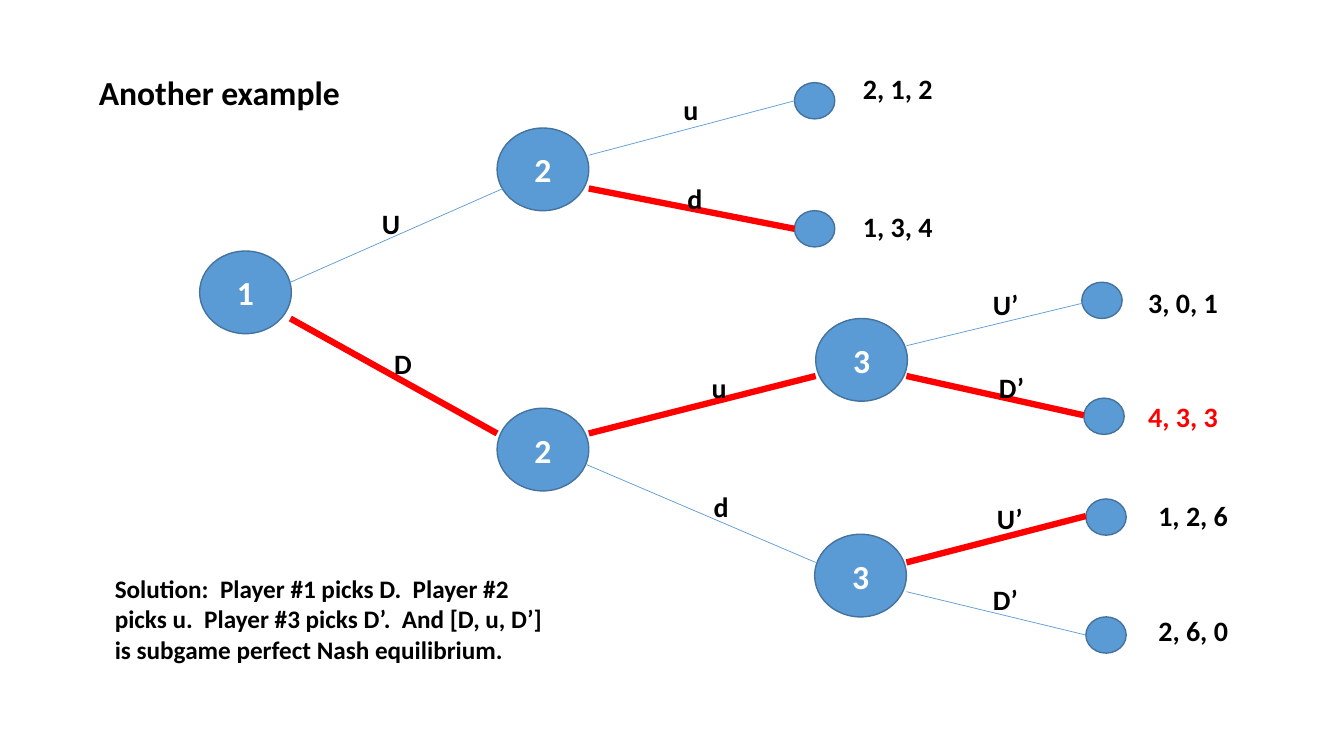
"""Build a slide showing a three-player game tree with its subgame perfect equilibrium."""
from lxml import etree
from pptx import Presentation
from pptx.dml.color import RGBColor
from pptx.enum.shapes import MSO_CONNECTOR, MSO_SHAPE
from pptx.enum.text import MSO_ANCHOR, MSO_AUTO_SIZE, PP_ALIGN
from pptx.oxml.ns import qn
from pptx.util import Inches, Pt

STRAIGHT = MSO_CONNECTOR.STRAIGHT
OVAL = MSO_SHAPE.OVAL
TOP, MIDDLE = MSO_ANCHOR.TOP, MSO_ANCHOR.MIDDLE
LEFT, CENTER = PP_ALIGN.LEFT, PP_ALIGN.CENTER
GROW = MSO_AUTO_SIZE.SHAPE_TO_FIT_TEXT

THEME = {
    "font": "Calibri",
    "node": RGBColor(0x5B, 0x9B, 0xD5),
    "outline": RGBColor(0x43, 0x73, 0x9E),
    "chosen": RGBColor(0xFF, 0x00, 0x00),
    "ink": RGBColor(0x00, 0x00, 0x00),
    "light": RGBColor(0xFF, 0xFF, 0xFF),
    "title_size": Pt(24),
    "label_size": Pt(20),
    "note_size": Pt(18),
    "outline_width": Pt(1),
    "branch_width": Pt(0.5),
    "chosen_width": Pt(4.5),
}


def write(box, text, size, color="ink", align=LEFT, anchor=TOP):
    """Fill a shape with one bold paragraph."""
    frame = box.text_frame
    frame.word_wrap = True
    frame.vertical_anchor = anchor
    para = frame.paragraphs[0]
    para.alignment = align
    span = para.add_run()
    span.text = text
    span.font.color.rgb = THEME[color]
    formats = {"name": THEME["font"], "size": THEME[size], "bold": True}
    for name, value in formats.items():
        setattr(span.font, name, value)


def add_node(page, left, top, width, height):
    """Add one ellipse of the tree."""
    node = page.shapes.add_shape(
        OVAL, Inches(left), Inches(top), Inches(width), Inches(height))
    node.shadow.inherit = False
    node.fill.solid()
    node.fill.fore_color.rgb = THEME["node"]
    node.line.color.rgb = THEME["outline"]
    node.line.width = THEME["outline_width"]
    return node


deck = Presentation()
deck.slide_width = Inches(13.33)
deck.slide_height = Inches(7.5)
page = deck.slides.add_slide(deck.slide_layouts[5])

players = [("1", 1.98, 2.49), ("2", 4.93, 1.27), ("2", 4.93, 4.05),
           ("3", 8.09, 3.16), ("3", 8.08, 5.3)]
for player, left, top in players:
    node = add_node(page, left, top, 0.91, 0.82)
    write(node, player, "title_size", "light", CENTER, MIDDLE)

outcomes = [(7.88, 0.82), (7.88, 2.09), (10.73, 2.8),
            (10.75, 3.95), (10.77, 4.95), (10.77, 6.12)]
for left, top in outcomes:
    add_node(page, left, top, 0.4, 0.36)

branches = [
    (2.88, 2.8, 4.99, 1.87, False),
    (2.88, 3.16, 4.93, 4.3, True),
    (5.84, 1.54, 7.88, 1, False),
    (5.84, 1.87, 7.88, 2.27, True),
    (5.84, 4.3, 8.09, 3.73, True),
    (5.82, 4.61, 8.09, 5.58, False),
    (8.99, 3.43, 10.77, 3, False),
    (8.99, 3.73, 10.75, 4.12, True),
    (8.99, 5.58, 10.77, 5.12, True),
    (8.99, 5.87, 10.77, 6.3, False),
]
for *ends, chosen in branches:
    branch = page.shapes.add_connector(STRAIGHT, *map(Inches, ends))
    branch.line.color.rgb = THEME["chosen" if chosen else "node"]
    branch.line.width = THEME["chosen_width" if chosen else "branch_width"]
    etree.SubElement(branch._element.spPr, qn("a:effectLst"))

labels = [
    ("2, 1, 2", 8.46, 0.66, 0.99, "ink"),
    ("1, 3, 4", 8.46, 2.03, 0.99, "ink"),
    ("3, 0, 1", 11.29, 2.78, 1.04, "ink"),
    ("4, 3, 3", 11.29, 3.91, 1.04, "chosen"),
    ("1, 2, 6", 11.39, 4.9, 0.94, "ink"),
    ("2, 6, 0", 11.39, 6.04, 0.99, "ink"),
    ("U", 3.69, 2, 0.36, "ink"),
    ("D", 3.81, 3.39, 0.34, "ink"),
    ("u", 6.68, 0.87, 0.28, "ink"),
    ("d", 6.72, 1.75, 0.37, "ink"),
    ("u", 6.96, 3.63, 0.24, "ink"),
    ("d", 6.98, 4.81, 0.22, "ink"),
    ("U’", 9.75, 2.8, 0.47, "ink"),
    ("D’", 9.81, 3.63, 0.5, "ink"),
    ("U’", 9.79, 4.93, 0.56, "ink"),
    ("D’", 9.75, 5.73, 0.56, "ink"),
]
for text, left, top, width, color in labels:
    label = page.shapes.add_textbox(
        Inches(left), Inches(top), Inches(width), Inches(0.44))
    write(label, text, "label_size", color)
    label.text_frame.auto_size = GROW

title = page.shapes.title
place = {"left": 0.88, "top": 0.66, "width": 2.69, "height": 0.5}
for name, value in place.items():
    setattr(title, name, Inches(value))
write(title, "Another example", "title_size")
title.text_frame.auto_size = GROW

solution = page.shapes.add_textbox(
    Inches(1.04), Inches(5.64), Inches(4.55), Inches(1.01))
write(solution, "Solution:  Player #1 picks D.  Player #2 picks u.  "
      "Player #3 picks D’.  And [D, u, D’] is subgame perfect Nash equilibrium.",
      "note_size")
solution.text_frame.auto_size = GROW

deck.save("out.pptx")
